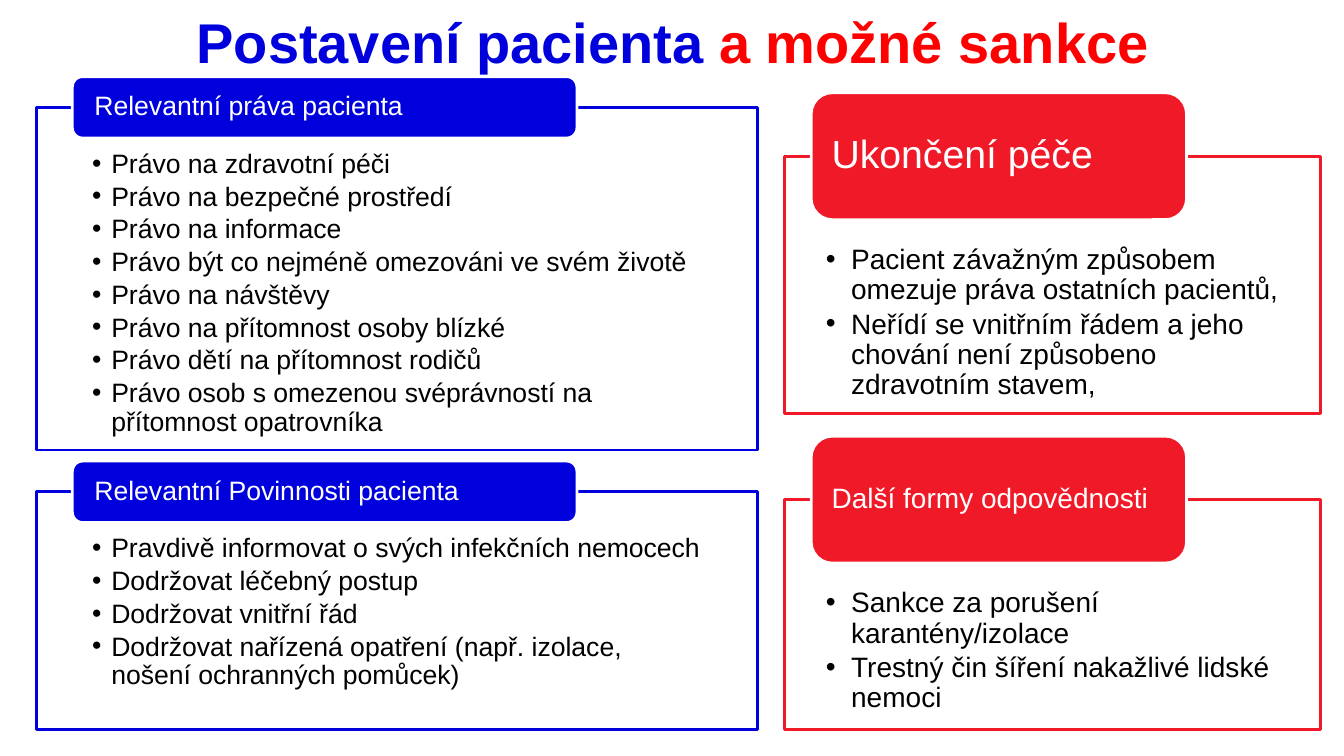
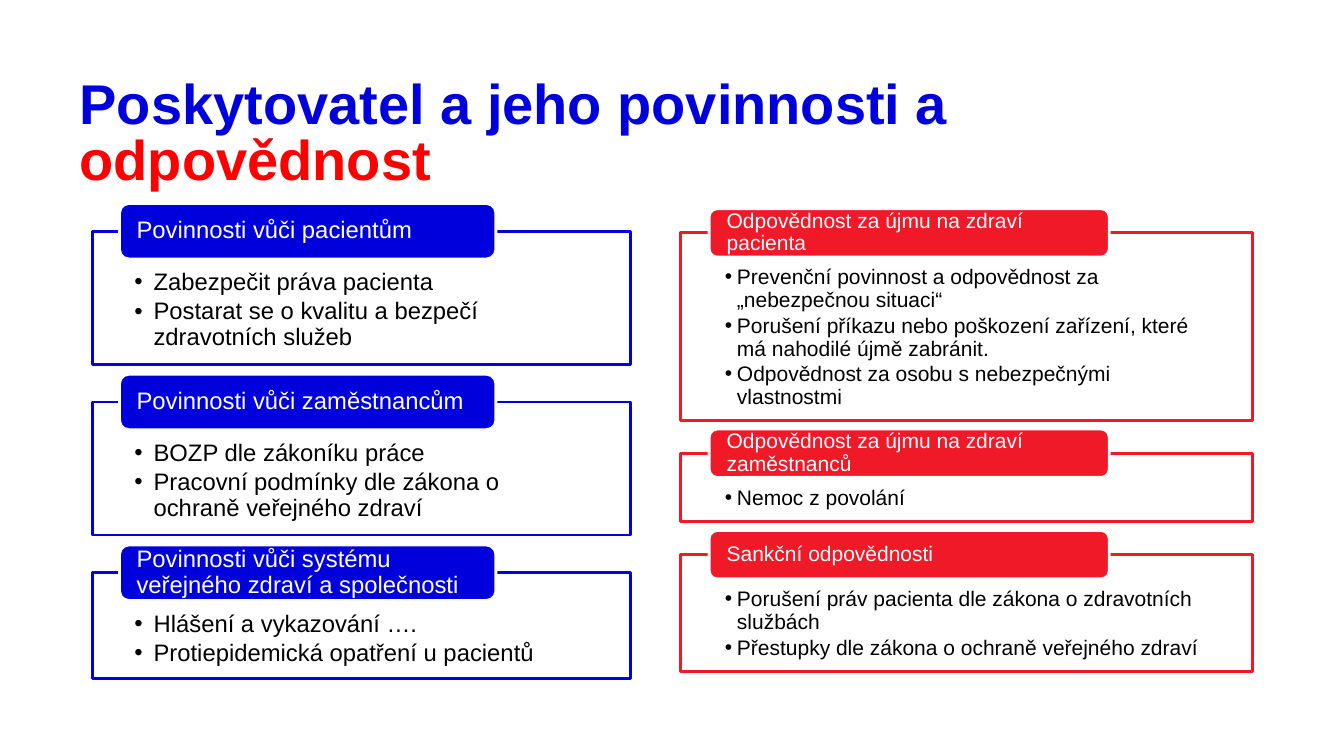
from dataclasses import dataclass
from typing import Optional

from lxml import etree
from pptx import Presentation
from pptx import util as u
from pptx.dml.color import RGBColor
from pptx.enum import shapes, text
from pptx.oxml import ns

COLORS = {
    "blue": "0000DC",
    "red": "F01928",
    "title_red": "FF0000",
    "white": "FFFFFF",
    "black": "000000",
}
FONT = "Arial"
SLIDE_WIDTH, SLIDE_HEIGHT = 13.33, 7.5

# Shares of the column width
TAB_INDENT, TAB_WIDTH, TAB_PADDING, BOX_PADDING = 0.05, 0.7, 0.0265, 0.0775
# Shares of the tab height
BOX_OFFSET, BULLET_OFFSET, PANEL_GAP = 0.5, 0.7, 0.18


@dataclass
class Panel:
    heading: str
    items: list[str]
    box_height: float  # percent of slide height
    heading_size: Optional[int] = None


@dataclass
class Column:
    """Stack of panels; lengths are percent of the slide's size."""
    color: str
    left: float
    width: float
    top: float
    tab_height: float
    font_size: int
    bullet_indent: float  # inches
    panels: list[Panel]


@dataclass
class TopicSlide:
    title_blue: str
    title_red: str
    title_top: float  # percent of slide height
    alignment: text.PP_ALIGN
    columns: list[Column]


TOPIC_SLIDES = [
    TopicSlide("Postavení pacienta ", "a možné sankce", 2.53, text.PP_ALIGN.CENTER, [
        Column("blue", 2.7, 53.64, 10.13, 8.13, 19, 0.19, [
            Panel("Relevantní práva pacienta", [
                "Právo na zdravotní péči",
                "Právo na bezpečné prostředí",
                "Právo na informace",
                "Právo být co nejméně omezováni ve svém životě",
                "Právo na návštěvy",
                "Právo na přítomnost osoby blízké",
                "Právo dětí na přítomnost rodičů",
                "Právo osob s omezenou svéprávností na přítomnost opatrovníka",
            ], 45.33),
            Panel("Relevantní Povinnosti pacienta", [
                "Pravdivě informovat o svých infekčních nemocech",
                "Dodržovat léčebný postup",
                "Dodržovat vnitřní řád",
                "Dodržovat nařízená opatření (např. izolace, nošení ochranných pomůcek)",
            ], 31.47),
        ]),
        Column("red", 58.36, 39.9, 12.27, 16.8, 20, 0.25, [
            Panel("Ukončení péče", [
                "Pacient závažným způsobem omezuje práva ostatních pacientů,",
                "Neřídí se vnitřním řádem a jeho chování není způsobeno zdravotním stavem,",
            ], 34, heading_size=28),
            Panel("Další formy odpovědnosti", [
                "Sankce za porušení karantény/izolace",
                "Trestný čin šíření nakažlivé lidské nemoci",
            ], 30.4),
        ]),
    ]),
    TopicSlide("Poskytovatel a jeho povinnosti a ", "odpovědnost", 10.53, text.PP_ALIGN.LEFT, [
        Column("blue", 6.9, 40, 26.93, 7.33, 17, 0.19, [
            Panel("Povinnosti vůči pacientům", [
                "Zabezpečit práva pacienta",
                "Postarat se o kvalitu a bezpečí zdravotních služeb",
            ], 17.6),
            Panel("Povinnosti vůči zaměstnancům", [
                "BOZP dle zákoníku práce",
                "Pracovní podmínky dle zákona o ochraně veřejného zdraví",
            ], 17.6),
            Panel("Povinnosti vůči systému veřejného zdraví a společnosti", [
                "Hlášení a vykazování ….",
                "Protiepidemická opatření u pacientů",
            ], 14),
        ]),
        Column("red", 50.64, 42.53, 27.6, 6.4, 15, 0.12, [
            Panel("Odpovědnost za újmu na zdraví pacienta", [
                "Prevenční povinnost a odpovědnost za „nebezpečnou situaci“",
                "Porušení příkazu nebo poškození zařízení, které má nahodilé újmě zabránit.",
                "Odpovědnost za osobu s nebezpečnými vlastnostmi",
            ], 24.8),
            Panel("Odpovědnost za újmu na zdraví zaměstnanců", [
                "Nemoc z povolání",
            ], 9.07),
            Panel("Sankční odpovědnosti", [
                "Porušení práv pacienta dle zákona o zdravotních službách",
                "Přestupky dle zákona o ochraně veřejného zdraví",
            ], 15.47),
        ]),
    ]),
]


def rgb(name: str) -> RGBColor:
    return RGBColor.from_string(COLORS[name])


def style_font(font, size: float, color: str, bold: bool = False) -> None:
    font.name, font.size, font.bold = FONT, u.Pt(size), bold
    font.color.rgb = rgb(color)


def prepare_frame(shape, anchor, side: float = 0, top: float = 0):
    """Set wrapping, anchor and insets (inches)."""
    frame = shape.text_frame
    frame.word_wrap = True
    frame.vertical_anchor = anchor
    frame.margin_left = frame.margin_right = u.Inches(side)
    frame.margin_top, frame.margin_bottom = u.Inches(top), 0
    return frame


def add_block(slide, kind, left: float, top: float, width: float, height: float,
              fill: str, line: str):
    shape = slide.shapes.add_shape(kind, *map(u.Inches, (left, top, width, height)))
    shape.shadow.inherit = False
    shape.fill.solid()
    shape.fill.fore_color.rgb = rgb(fill)
    shape.line.color.rgb = rgb(line)
    shape.line.width = u.Pt(2)
    return shape


def add_bullet(paragraph, indent: float) -> None:
    properties = paragraph._p.get_or_add_pPr()
    properties.set("marL", str(u.Inches(indent)))
    properties.set("indent", str(-u.Inches(indent)))
    etree.SubElement(properties, ns.qn("a:buFont")).set("typeface", FONT)
    etree.SubElement(properties, ns.qn("a:buChar")).set("char", "•")


def add_title(slide, topic: TopicSlide) -> None:
    box = slide.shapes.add_textbox(u.Inches(0.79), u.Inches(topic.title_top / 100 * SLIDE_HEIGHT),
                                   u.Inches(11.76), u.Inches(0.49))
    paragraph = prepare_frame(box, text.MSO_ANCHOR.TOP).paragraphs[0]
    paragraph.alignment = topic.alignment
    paragraph.line_spacing = u.Pt(40)
    for words, color in ((topic.title_blue, "blue"), (topic.title_red, "title_red")):
        run = paragraph.add_run()
        run.text = words
        style_font(run.font, 40, color, bold=True)


def add_panel(slide, column: Column, panel: Panel, tab_top: float) -> float:
    """Draw a framed list with its heading tab; return the frame's bottom."""
    left, width = column.left / 100 * SLIDE_WIDTH, column.width / 100 * SLIDE_WIDTH
    tab_height = column.tab_height / 100 * SLIDE_HEIGHT
    box_top = tab_top + BOX_OFFSET * tab_height
    box_height = panel.box_height / 100 * SLIDE_HEIGHT

    # Framed list
    box = add_block(slide, shapes.MSO_SHAPE.RECTANGLE, left, box_top, width, box_height,
                    "white", column.color)
    frame = prepare_frame(box, text.MSO_ANCHOR.TOP, BOX_PADDING * width,
                          BULLET_OFFSET * tab_height)
    frame.text = "\n".join(panel.items)
    for paragraph in frame.paragraphs:
        paragraph.alignment = text.PP_ALIGN.LEFT
        paragraph.line_spacing = 0.9
        paragraph.space_after = u.Pt(0.15 * column.font_size)
        add_bullet(paragraph, column.bullet_indent)
        style_font(paragraph.runs[0].font, column.font_size, "black")

    # Heading tab
    tab = add_block(slide, shapes.MSO_SHAPE.ROUNDED_RECTANGLE, left + TAB_INDENT * width,
                    tab_top, TAB_WIDTH * width, tab_height, column.color, "white")
    frame = prepare_frame(tab, text.MSO_ANCHOR.MIDDLE, TAB_PADDING * width)
    frame.text = panel.heading
    heading = frame.paragraphs[0]
    heading.alignment = text.PP_ALIGN.LEFT
    heading.line_spacing = 0.9
    style_font(heading.runs[0].font, panel.heading_size or column.font_size, "white")
    return box_top + box_height


def add_column(slide, column: Column) -> None:
    tab_top = column.top / 100 * SLIDE_HEIGHT
    gap = PANEL_GAP * column.tab_height / 100 * SLIDE_HEIGHT
    for panel in column.panels:
        tab_top = add_panel(slide, column, panel, tab_top) + gap


def main() -> None:
    presentation = Presentation()
    presentation.slide_width = u.Inches(SLIDE_WIDTH)
    presentation.slide_height = u.Inches(SLIDE_HEIGHT)
    for topic in TOPIC_SLIDES:
        slide = presentation.slides.add_slide(presentation.slide_layouts[6])
        add_title(slide, topic)
        for column in topic.columns:
            add_column(slide, column)
    presentation.save("out.pptx")


if __name__ == "__main__":
    main()
